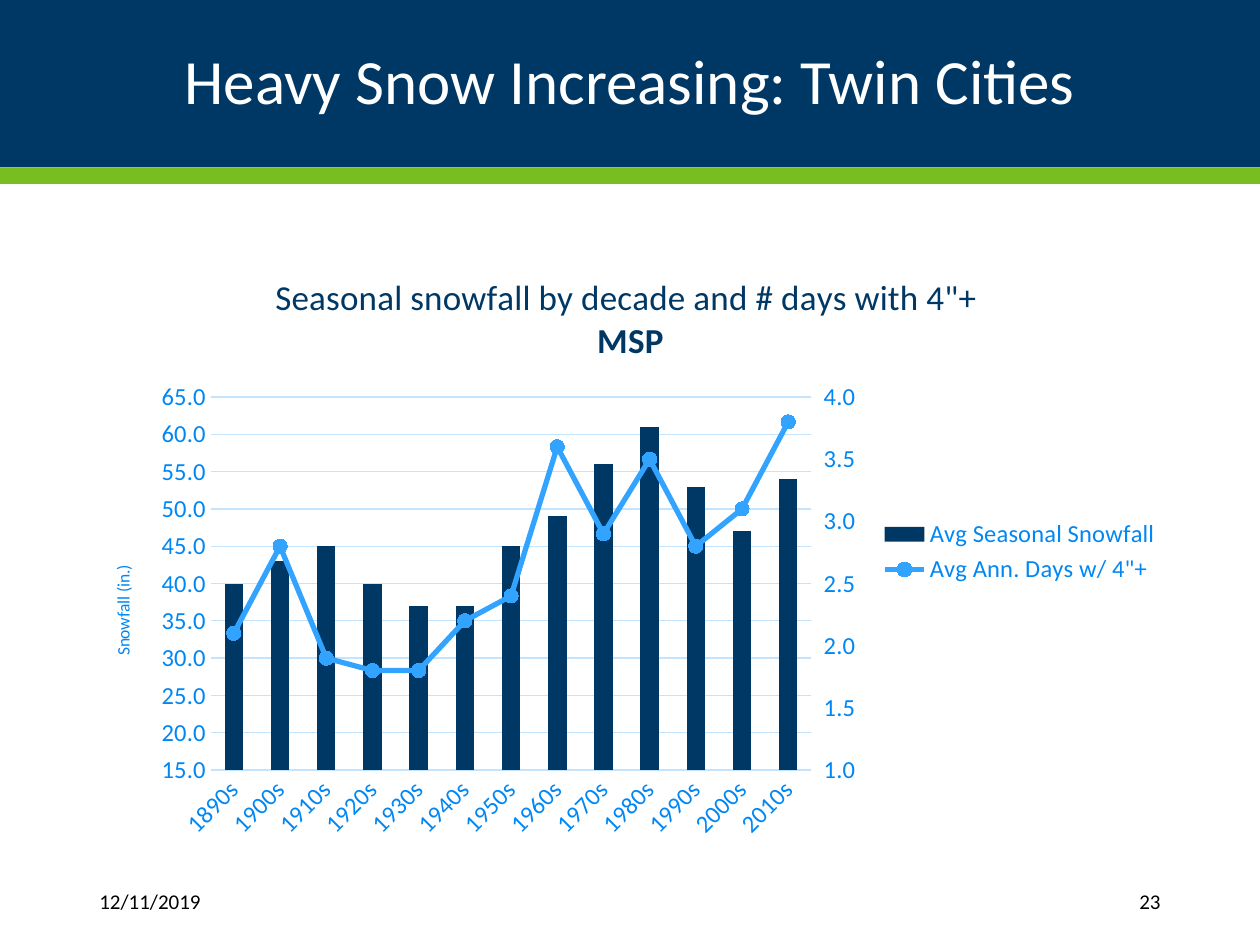
from pptx import Presentation
from pptx.chart.data import CategoryChartData
from pptx.dml.color import RGBColor
from pptx.enum import chart as ch, shapes, text
from pptx.oxml import parse_xml
from pptx.oxml.ns import nsdecls
from pptx.util import Inches, Pt

# Content
FONT = "Calibri"
NAVY, GREEN, BLUE, SKY, PALE = "003865", "78BE21", "0087F4", "32A4FF", "C2E4FF"
TITLE = "Heavy Snow Increasing: Twin Cities"
BANDS = [(0, 1.33, NAVY), (1.33, 0.13, GREEN)]  # top, height, colour
FOOTERS = [
    ("12/11/2019", 0.69, 1.11, text.PP_ALIGN.LEFT),
    ("23", 8.11, 1.2, text.PP_ALIGN.RIGHT),
]
CHART_TITLE = [("Seasonal snowfall by decade and # days with 4\"+ ", False), ("MSP", True)]
DECADES = [f"{year}s" for year in range(1890, 2020, 10)]
SERIES = [
    ("Avg Seasonal Snowfall", [40, 43, 45, 40, 37, 37, 45, 49, 56, 61, 53, 47, 54]),
    ("Avg Ann. Days w/ 4\"+",
     [2.1, 2.8, 1.9, 1.8, 1.8, 2.2, 2.4, 3.6, 2.9, 3.5, 2.8, 3.1, 3.8]),
]


def color(value):
    return RGBColor.from_string(value)


def paint(fill, value):
    fill.solid()
    fill.fore_color.rgb = color(value)


def style(font, size, value, bold=False):
    font.name, font.size, font.bold = FONT, Pt(size), bold
    font.color.rgb = color(value)


def write(paragraph, words, size, value, bold=False):
    run = paragraph.add_run()
    run.text = words
    style(run.font, size, value, bold)


def place(element, index, **percents):
    """Give a chart part a manual layout in percent of the chart."""
    for old in element.xpath("c:layout"):
        element.remove(old)
    inner = '<c:layoutTarget val="inner"/>' if "w" in percents else ""
    modes = "".join(f'<c:{key}Mode val="edge"/>' for key in "xy")
    values = "".join(f'<c:{key} val="{value / 100:.4f}"/>' for key, value in percents.items())
    element.insert(index, parse_xml(
        f'<c:layout {nsdecls("c")}><c:manualLayout>{inner}{modes}{values}'
        "</c:manualLayout></c:layout>"))


def move_to_right_axis(plot_area):
    """Turn the second column series into a line on its own value axis."""
    series = plot_area.xpath("c:barChart/c:ser")[1]
    for extra in series.xpath("c:invertIfNegative"):
        series.remove(extra)
    line_chart = parse_xml(
        f'<c:lineChart {nsdecls("c")}><c:grouping val="standard"/><c:varyColors val="0"/>'
        '<c:marker val="1"/><c:axId val="5001"/><c:axId val="5002"/></c:lineChart>')
    line_chart.insert(2, series)
    plot_area.xpath("c:barChart")[0].addnext(line_chart)
    category_axis = parse_xml(
        f'<c:catAx {nsdecls("c")}><c:axId val="5001"/>'
        '<c:scaling><c:orientation val="minMax"/></c:scaling><c:delete val="1"/>'
        '<c:axPos val="b"/><c:crossAx val="5002"/><c:crosses val="autoZero"/></c:catAx>')
    value_axis = parse_xml(
        f'<c:valAx {nsdecls("c", "a")}><c:axId val="5002"/>'
        '<c:scaling><c:orientation val="minMax"/><c:max val="4"/><c:min val="1"/></c:scaling>'
        '<c:delete val="0"/><c:axPos val="r"/><c:numFmt formatCode="0.0" sourceLinked="0"/>'
        '<c:majorTickMark val="out"/><c:minorTickMark val="none"/><c:tickLblPos val="nextTo"/>'
        '<c:spPr><a:ln><a:noFill/></a:ln></c:spPr>'
        '<c:txPr><a:bodyPr/><a:p><a:pPr><a:defRPr sz="1400" b="0"><a:solidFill>'
        f'<a:srgbClr val="{BLUE}"/></a:solidFill><a:latin typeface="{FONT}"/></a:defRPr>'
        '</a:pPr><a:endParaRPr lang="en-US"/></a:p></c:txPr>'
        '<c:crossAx val="5001"/><c:crosses val="max"/><c:crossBetween val="between"/>'
        '<c:majorUnit val="0.5"/></c:valAx>')
    last_axis = plot_area.xpath("c:valAx")[-1]
    last_axis.addnext(value_axis)
    value_axis.addnext(category_axis)


def add_snow_chart(slide):
    data = CategoryChartData(number_format="0.0")
    data.categories = DECADES
    for name, values in SERIES:
        data.add_series(name, values)
    chart = slide.shapes.add_chart(
        ch.XL_CHART_TYPE.COLUMN_CLUSTERED,
        Inches(0.69), Inches(2), Inches(8.62), Inches(4.76), data).chart
    style(chart.font, 10, NAVY)

    # Chart title
    chart.has_title = True
    frame = chart.chart_title.text_frame
    for index, (words, bold) in enumerate(CHART_TITLE):
        paragraph = frame.add_paragraph() if index else frame.paragraphs[0]
        write(paragraph, words, 20, NAVY, bold)
    place(chart.element.xpath("c:chart/c:title")[0], 1, x=17, y=3)

    # Left and bottom axes
    decades, snowfall = chart.category_axis, chart.value_axis
    for axis in (decades, snowfall):
        style(axis.tick_labels.font, 14, BLUE)
        axis.major_tick_mark = axis.minor_tick_mark = ch.XL_TICK_MARK.NONE
    decades.has_major_gridlines = False
    snowfall.has_major_gridlines = True
    for line in (decades.format.line, snowfall.major_gridlines.format.line):
        paint(line.fill, PALE)
        line.width = Pt(0.75)
    chart.element.xpath(".//c:catAx/c:txPr/a:bodyPr")[0].set("rot", "-2700000")
    snowfall.format.line.fill.background()
    snowfall.minimum_scale, snowfall.maximum_scale, snowfall.major_unit = 15, 65, 5
    snowfall.tick_labels.number_format = "0.0"
    snowfall.tick_labels.number_format_is_linked = False
    snowfall.has_title = True
    write(snowfall.axis_title.text_frame.paragraphs[0], "Snowfall (in.)", 10, BLUE)
    axis_title = chart.element.xpath(".//c:valAx/c:title")[0]
    axis_title.xpath(".//a:bodyPr")[0].set("rot", "-5400000")
    place(axis_title, 1, x=2, y=51.7)

    # Columns and line
    plot_area = chart.element.xpath(".//c:plotArea")[0]
    move_to_right_axis(plot_area)
    place(plot_area, 0, x=11.4, y=24.2, w=55.3, h=62.2)
    columns, line_plot = chart.plots
    columns.gap_width = 150
    columns.vary_by_categories = False
    paint(columns.series[0].format.fill, NAVY)
    days = line_plot.series[0]
    days.smooth = False
    paint(days.format.line.fill, SKY)
    days.format.line.width = Pt(3)
    days.marker.style, days.marker.size = ch.XL_MARKER_STYLE.CIRCLE, 8
    paint(days.marker.format.fill, SKY)
    paint(days.marker.format.line.fill, SKY)

    # Legend
    chart.has_legend = True
    chart.legend.position = ch.XL_LEGEND_POSITION.RIGHT
    chart.legend.include_in_layout = False
    style(chart.legend.font, 14, BLUE)


def main():
    presentation = Presentation()
    presentation.slide_width, presentation.slide_height = Inches(10), Inches(7.5)
    slide = presentation.slides.add_slide(presentation.slide_layouts[5])

    # Header bands, behind the title
    title = slide.shapes.title
    for top, height, fill in BANDS:
        band = slide.shapes.add_shape(
            shapes.MSO_SHAPE.RECTANGLE, 0, Inches(top), Inches(10), Inches(height))
        band.shadow.inherit = False
        paint(band.fill, fill)
        band.line.fill.background()
    band.element.addnext(title.element)

    # Title
    title.left, title.top, title.width, title.height = map(Inches, (0.69, 0.17, 8.62, 1))
    title.text_frame.vertical_anchor = text.MSO_ANCHOR.MIDDLE
    paragraph = title.text_frame.paragraphs[0]
    paragraph.alignment, paragraph.line_spacing = text.PP_ALIGN.CENTER, 0.9
    write(paragraph, TITLE, 36, "FFFFFF")

    # Date and slide number
    for words, left, width, alignment in FOOTERS:
        box = slide.shapes.add_textbox(Inches(left), Inches(6.95), Inches(width), Inches(0.4))
        box.text_frame.word_wrap = True
        box.text_frame.vertical_anchor = text.MSO_ANCHOR.MIDDLE
        box.text_frame.paragraphs[0].alignment = alignment
        write(box.text_frame.paragraphs[0], words, 12, "000000")

    add_snow_chart(slide)
    presentation.save("out.pptx")


if __name__ == "__main__":
    main()
